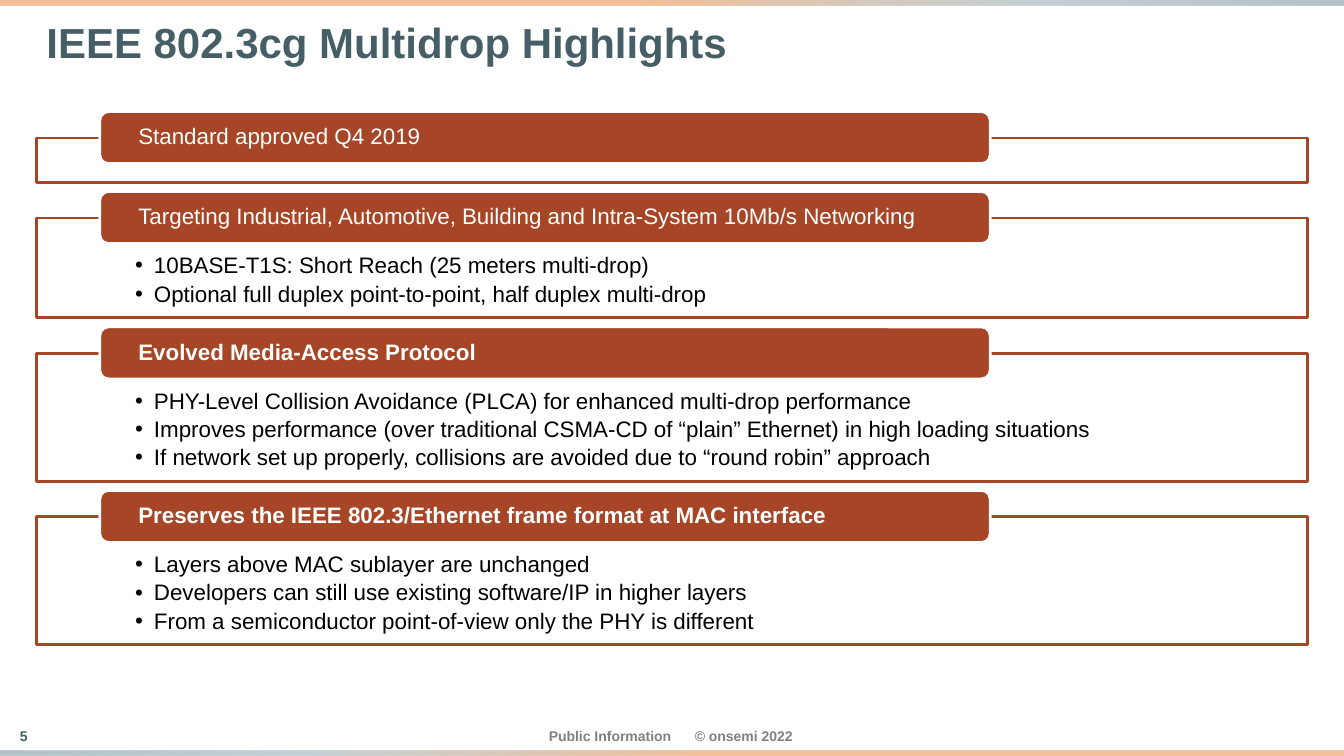
from lxml import etree
from pptx import Presentation
from pptx.dml.color import RGBColor
from pptx.enum import shapes, text
from pptx.oxml import ns
from pptx.util import Pt

RUST, SLATE, GRAY, WHITE, BLACK = "A64626", "465E66", "808080", "FFFFFF", "000000"
STRIP_STOPS = [(47, "E97D2E"), (77, "87A3AC"), (100, "648692")]


def color(hex_code):
    return RGBColor.from_string(hex_code)


def add_xml(parent, tag, **attributes):
    return etree.SubElement(parent, ns.qn(tag), attributes)


class HighlightSlide:
    font_name = "Arial"
    frame_left, frame_width = 26, 908
    heading_left, heading_width, heading_height = 71.3, 636, 37.2
    heading_rise = 18.9
    line_width = 2

    def __init__(self, slide):
        self.slide = slide
        self.list_holders = [p for p in slide.placeholders
                             if p != slide.shapes.title]

    def place(self, shape, left, top, width, height):
        shape.left, shape.top = Pt(left), Pt(top)
        shape.width, shape.height = Pt(width), Pt(height)

    def outline(self, shape, fill, line):
        shape.fill.solid()
        shape.fill.fore_color.rgb = color(fill)
        shape.line.color.rgb = color(line)
        shape.line.width = Pt(self.line_width)

    def block(self, kind, left, top, width, height):
        shape = self.slide.shapes.add_shape(
            kind, Pt(left), Pt(top), Pt(width), Pt(height))
        shape.shadow.inherit = False
        return shape

    def set_text(self, shape, lines, size, hex_code, bold=False, spacing=1.0,
                 after=0, insets=(0, 0, 0, 0), anchor=text.MSO_ANCHOR.MIDDLE,
                 bullet=False, tab=None, align=text.PP_ALIGN.LEFT, wrap=True):
        frame = shape.text_frame
        frame.word_wrap, frame.auto_size = wrap, text.MSO_AUTO_SIZE.NONE
        frame.vertical_anchor = anchor
        (frame.margin_left, frame.margin_top,
         frame.margin_right, frame.margin_bottom) = map(Pt, insets)
        frame.text = "\n".join(lines)
        for paragraph in frame.paragraphs:
            paragraph.alignment = align
            paragraph.line_spacing = spacing
            paragraph.space_before, paragraph.space_after = Pt(0), Pt(after)
            properties = paragraph._p.get_or_add_pPr()
            if bullet:
                properties.set("marL", str(Pt(13.5)))
                properties.set("indent", str(Pt(-13.5)))
                add_xml(properties, "a:buFont", typeface=self.font_name)
                add_xml(properties, "a:buChar", char="•")
            if tab:
                stops = add_xml(properties, "a:tabLst")
                add_xml(stops, "a:tab", pos=str(Pt(tab)), algn="l")
            font = paragraph.font
            font.name, font.size, font.bold = self.font_name, Pt(size), bold
            font.color.rgb = color(hex_code)

    def title(self, words):
        shape = self.slide.shapes.title
        self.place(shape, self.frame_left, 11.5, self.frame_width, 40.3)
        self.set_text(shape, [words], 30, SLATE, bold=True, spacing=0.92,
                      insets=(7.2, 3.6, 7.2, 3.6), anchor=text.MSO_ANCHOR.BOTTOM)

    def strip(self, top, angle):
        shape = self.block(shapes.MSO_SHAPE.RECTANGLE, 0, top, 960, 3.8)
        shape.line.fill.background()
        shape.fill.gradient()
        gradient = shape.element.spPr.find(ns.qn("a:gradFill"))
        stops = gradient.find(ns.qn("a:gsLst"))
        for stop in list(stops):
            stops.remove(stop)
        for position, hex_code in STRIP_STOPS:
            stop = add_xml(stops, "a:gs", pos=str(position * 1000))
            shade = add_xml(stop, "a:srgbClr", val=hex_code)
            add_xml(shade, "a:alpha", val="50000")
        gradient.find(ns.qn("a:lin")).set("ang", str(angle * 60000))

    def frame(self, top, height, points):
        box = (self.frame_left, top, self.frame_width, height)
        if points:
            shape = self.list_holders.pop(0)
            self.place(shape, *box)
            self.set_text(shape, points, 16, BLACK, spacing=0.9, after=3,
                          insets=(70.5, 26, 70.5, 8.6), bullet=True,
                          anchor=text.MSO_ANCHOR.TOP)
        else:
            shape = self.block(shapes.MSO_SHAPE.RECTANGLE, *box)
        self.outline(shape, WHITE, RUST)

    def heading(self, frame_top, words, bold):
        shape = self.block(shapes.MSO_SHAPE.ROUNDED_RECTANGLE,
                           self.heading_left, frame_top - self.heading_rise,
                           self.heading_width, self.heading_height)
        self.outline(shape, RUST, WHITE)
        self.set_text(shape, [words], 16, WHITE, bold, spacing=0.9,
                      insets=(25.7, 0, 25.7, 0))

    def footer(self, words, left, width, hex_code, **style):
        box = self.slide.shapes.add_textbox(Pt(left), Pt(520), Pt(width), Pt(12))
        self.set_text(box, [words], 10, hex_code, bold=True, wrap=False, **style)

    def drop_unused_holders(self):
        for holder in self.list_holders:
            holder.element.getparent().remove(holder.element)


SECTIONS = [
    ("Standard approved Q4 2019", False, []),
    ("Targeting Industrial, Automotive, Building and Intra-System 10Mb/s Networking",
     False,
     ["10BASE-T1S: Short Reach (25 meters multi-drop)",
      "Optional full duplex point-to-point, half duplex multi-drop"]),
    ("Evolved Media-Access Protocol", True,
     ["PHY-Level Collision Avoidance (PLCA) for enhanced multi-drop performance",
      "Improves performance (over traditional CSMA-CD of “plain” Ethernet) "
      "in high loading situations",
      "If network set up properly, collisions are avoided due to "
      "“round robin” approach"]),
    ("Preserves the IEEE 802.3/Ethernet frame format at MAC interface", True,
     ["Layers above MAC sublayer are unchanged",
      "Developers can still use existing software/IP in higher layers",
      "From a semiconductor point-of-view only the PHY is different"]),
]
FRAME_HEIGHTS = {0: 31.7, 2: 71.3, 3: 91.4}  # by number of points
FRAME_GAP = 25.4


def main():
    deck = Presentation()
    deck.slide_width, deck.slide_height = Pt(960), Pt(540)
    comparison_layout = deck.slide_layouts[4]
    page = HighlightSlide(deck.slides.add_slide(comparison_layout))

    # Title and edge strips
    page.title("IEEE 802.3cg Multidrop Highlights")
    page.strip(0, 0)
    page.strip(536.2, 180)

    # Framed sections, each with a heading on its top edge
    top = 98.6
    for words, bold, points in SECTIONS:
        height = FRAME_HEIGHTS[len(points)]
        page.frame(top, height, points)
        page.heading(top, words, bold)
        top += height + FRAME_GAP
    page.drop_unused_holders()

    # Footer
    page.footer("5", 10.8, 12.2, SLATE, align=text.PP_ALIGN.CENTER)
    page.footer("Public Information\t© onsemi 2022", 392, 177, GRAY, tab=104.3)

    deck.save("out.pptx")


if __name__ == "__main__":
    main()
